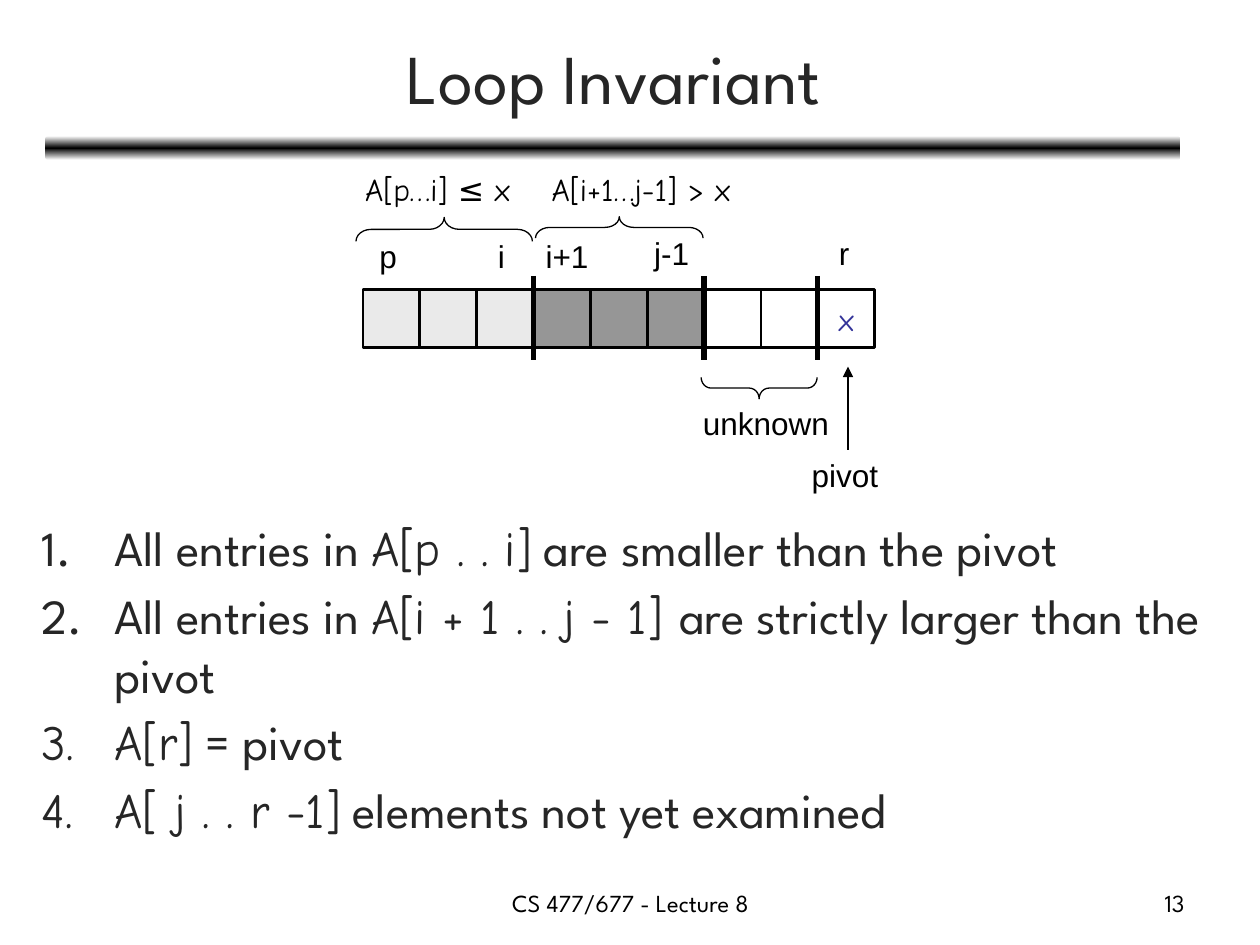
import copy
from dataclasses import dataclass

import pptx
import pptx.dml.color
import pptx.enum.shapes
import pptx.enum.text
import pptx.oxml
import pptx.oxml.ns
import pptx.util

Inches = pptx.util.Inches
Pt = pptx.util.Pt
Shape = pptx.enum.shapes.MSO_SHAPE
Align = pptx.enum.text.PP_ALIGN
Anchor = pptx.enum.text.MSO_ANCHOR


@dataclass(frozen=True)
class Theme:
    heading_font: str = "League Spartan"
    math_font: str = "Comic Neue"
    label_font: str = "Arial"
    title_size: int = 40
    body_size: int = 28
    label_size: int = 18
    footer_size: int = 14
    ink: str = "262626"
    black: str = "000000"
    white: str = "FFFFFF"
    pivot: str = "333399"
    smaller: str = "EAEAEA"
    larger: str = "969696"
    thin: float = 0.75
    medium: float = 1.5
    thick: float = 3


def rgb(color):
    return pptx.dml.color.RGBColor.from_string(color)


def box(left, top, width, height):
    return [Inches(value) for value in (left, top, width, height)]


def add_xml(parent, tag, **attributes):
    element = pptx.oxml.parse_xml(f"<{tag} {pptx.oxml.ns.nsdecls('a')}/>")
    for name, value in attributes.items():
        element.set(name, str(value))
    parent.append(element)


class SlideBuilder:
    def __init__(self, slide, theme):
        self.slide = slide
        self.theme = theme

    def style(self, font, name, size, color):
        font.name = name
        font.size = Pt(size)
        font.color.rgb = rgb(color)

    def text(self, frame, text, name, size, color=None, align=Align.LEFT, wrap=True,
             anchor=Anchor.TOP):
        shape = self.slide.shapes.add_textbox(*box(*frame))
        shape.text_frame.word_wrap = wrap
        shape.text_frame.vertical_anchor = anchor
        paragraph = shape.text_frame.paragraphs[0]
        paragraph.text = text
        paragraph.alignment = align
        self.style(paragraph.font, name, size, color or self.theme.black)

    def label(self, frame, text):
        self.text(frame, text, self.theme.label_font, self.theme.label_size,
                  align=Align.CENTER, wrap=False)

    def shape(self, kind, frame, fill=None, line_width=None):
        shape = self.slide.shapes.add_shape(kind, *box(*frame))
        shape.shadow.inherit = False
        if fill:
            shape.fill.solid()
            shape.fill.fore_color.rgb = rgb(fill)
        else:
            shape.fill.background()
        if line_width:
            shape.line.color.rgb = rgb(self.theme.black)
            shape.line.width = Pt(line_width)
        else:
            shape.line.fill.background()
        return shape

    def rule(self, frame):
        """Bar that fades from black in the middle to white at both edges."""
        fill = self.shape(Shape.ROUNDED_RECTANGLE, frame).fill
        fill.gradient()
        fill.gradient_angle = 90
        last_stop = fill.gradient_stops[-1]._gs
        last_stop.addnext(copy.deepcopy(last_stop))
        colors = (self.theme.white, self.theme.black, self.theme.white)
        for stop, position, color in zip(fill.gradient_stops, (0, 0.5, 1), colors):
            stop.position = position
            stop.color.rgb = rgb(color)

    def cell(self, frame, fill=None, text=None):
        shape = self.shape(Shape.RECTANGLE, frame, fill, self.theme.medium)
        if text:
            paragraph = shape.text_frame.paragraphs[0]
            paragraph.text = text
            paragraph.alignment = Align.CENTER
            paragraph.space_before = Pt(3.6)
            self.style(paragraph.font, self.theme.math_font, self.theme.label_size,
                       self.theme.pivot)

    def brace(self, frame, rotation, curve):
        shape = self.shape(Shape.LEFT_BRACE, frame, line_width=self.theme.thin)
        shape.rotation = rotation
        shape.adjustments[0] = curve

    def vertical_line(self, x, start, end, width, arrow=False):
        line = self.slide.shapes.add_connector(
            pptx.enum.shapes.MSO_CONNECTOR.STRAIGHT,
            Inches(x), Inches(start), Inches(x), Inches(end))
        line.line.color.rgb = rgb(self.theme.black)
        line.line.width = Pt(width)
        if arrow:
            add_xml(line.line._get_or_add_ln(), "a:tailEnd", type="triangle")
        add_xml(line._element.spPr, "a:effectLst")

    def numbered_list(self, frame, items):
        """Each item is (first number of its sequence, [(text, font name), ...])."""
        shape = self.slide.shapes.add_textbox(*box(*frame))
        text_frame = shape.text_frame
        text_frame.word_wrap = True
        for index, (start, runs) in enumerate(items):
            paragraph = text_frame.add_paragraph() if index else text_frame.paragraphs[0]
            paragraph.space_before = Pt(5)
            properties = paragraph._p.get_or_add_pPr()
            properties.set("marL", str(Inches(0.58)))
            properties.set("indent", str(Inches(-0.58)))
            add_xml(properties, "a:buAutoNum", type="arabicPeriod", startAt=start)
            for text, name in runs:
                run = paragraph.add_run()
                run.text = text
                self.style(run.font, name, self.theme.body_size, self.theme.ink)


def draw_array(builder, theme):
    left, top, width, height = 2.88, 2.3, 0.4514, 0.46
    fills = [theme.smaller] * 3 + [theme.larger] * 3 + [None] * 3
    for index, fill in enumerate(fills):
        text = "x" if index == len(fills) - 1 else None
        builder.cell((left + index * width, top, width, height), fill, text)
    for boundary in (3, 6, 8):
        builder.vertical_line(left + boundary * width, 2.19, 2.86, theme.thick)

    for frame, rotation, curve in (
        ((3.43, 1.12, 0.19, 1.4), 90, 0.63),
        ((4.83, 1.14, 0.17, 1.33), 90, 0.67),
        ((5.94, 2.62, 0.17, 0.92), 270, 0.46),
    ):
        builder.brace(frame, rotation, curve)

    for frame, text in (
        ((2.8, 1.3, 1.46, 0.4), "A[p…i] ≤ x"),
        ((4.28, 1.3, 1.91, 0.4), "A[i+1…j-1] > x"),
    ):
        builder.text(frame, text, theme.math_font, theme.label_size)

    for label_left, label_top, label_width, text in (
        (2.91, 1.83, 0.34, "p"),
        (3.85, 1.83, 0.26, "i"),
        (4.23, 1.83, 0.54, "i+1"),
        (5.09, 1.81, 0.48, "j-1"),
        (6.56, 1.81, 0.28, "r"),
        (5.48, 3.16, 1.2, "unknown"),
        (6.34, 3.57, 0.73, "pivot"),
    ):
        builder.label((label_left, label_top, label_width, 0.4), text)
    builder.vertical_line(6.73, 3.57, 2.91, theme.medium, arrow=True)


def main():
    presentation = pptx.Presentation()
    presentation.slide_width, presentation.slide_height = Inches(10), Inches(7.5)
    slide = presentation.slides.add_slide(presentation.slide_layouts[6])
    theme = Theme()
    builder = SlideBuilder(slide, theme)
    heading, math = theme.heading_font, theme.math_font

    builder.rule((0.36, 1.08, 9.01, 0.19))
    builder.text((0.37, 0.11, 9, 0.99), "Loop Invariant", heading, theme.title_size,
                 theme.ink, Align.CENTER, anchor=Anchor.MIDDLE)
    builder.numbered_list((0.23, 4.06, 9.57, 3.09), [
        (1, [("All entries in ", heading), ("A[p . . i]", math),
             (" are smaller than the pivot", heading)]),
        (1, [("All entries in ", heading), ("A[i + 1 . . j - 1] ", math),
             ("are strictly larger than the pivot", heading)]),
        (3, [("A[r]", math), (" = pivot", heading)]),
        (3, [("A[ j . . r -1]", math), (" elements not yet examined", heading)]),
    ])
    draw_array(builder, theme)
    builder.text((3.42, 7, 3.17, 0.35), "CS 477/677 - Lecture 8", heading,
                 theme.footer_size, align=Align.CENTER)
    builder.text((7.17, 7, 2.33, 0.35), "13", heading, theme.footer_size,
                 align=Align.RIGHT)
    presentation.save("out.pptx")


if __name__ == "__main__":
    main()
